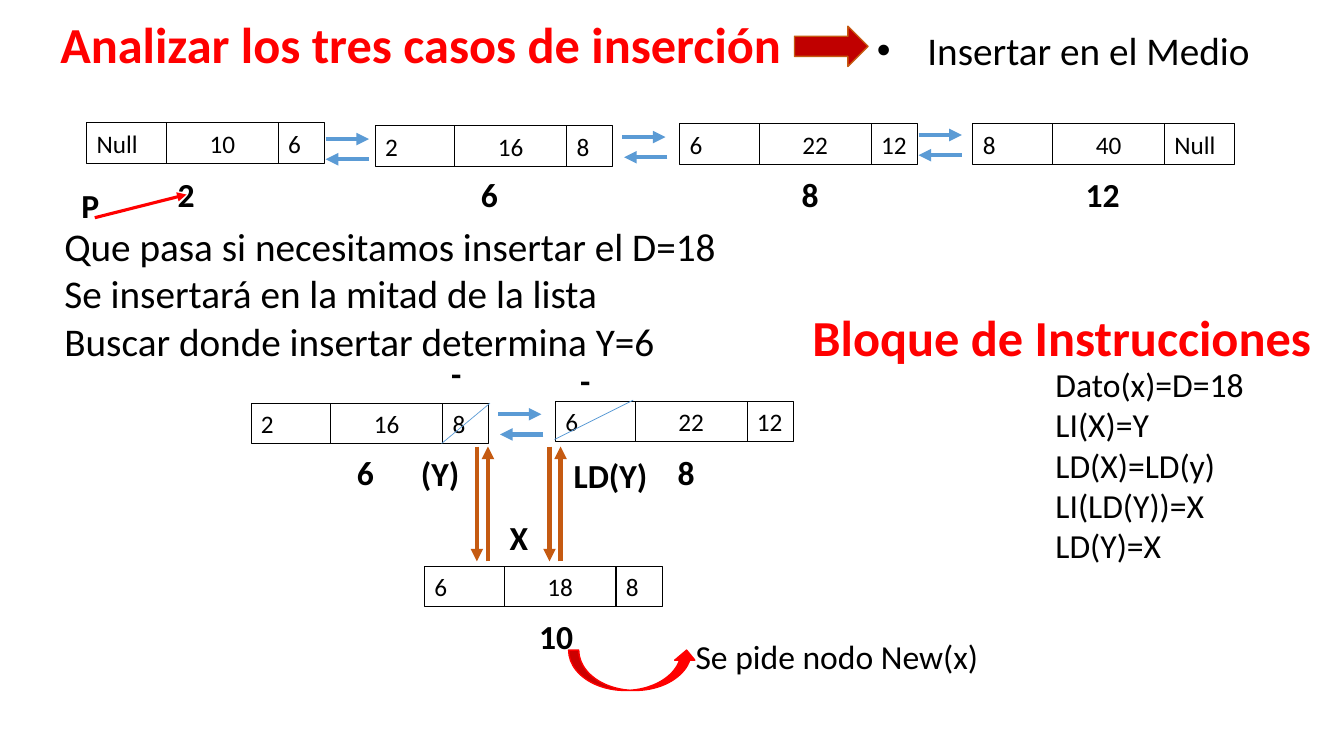
import dataclasses

import lxml.etree
import pptx
import pptx.dml.color
import pptx.enum.shapes
import pptx.enum.text
import pptx.oxml.ns
import pptx.util

ALIGN = pptx.enum.text.PP_ALIGN
SHAPE = pptx.enum.shapes.MSO_SHAPE


@dataclasses.dataclass(frozen=True)
class Theme:
    font: str = "Calibri"
    ink: str = "000000"
    red: str = "FF0000"
    dark_red: str = "C00000"
    blue: str = "5B9BD5"
    orange: str = "C55A11"
    title: int = 36
    body: int = 28
    label: int = 24
    cell: int = 18


def rgb(value):
    return pptx.dml.color.RGBColor.from_string(value)


def add_element(parent, tag, **attributes):
    return lxml.etree.SubElement(parent, pptx.oxml.ns.qn(tag), attributes)


class ListSlide:
    """Draws on a grid whose columns and rows are a tenth of an inch."""

    cell_widths = (7.9, 11.1, 4.6)
    cell_height = 4
    link_length = 4.3
    link_gap = 2
    label_size = (7.1, 5)

    def __init__(self, presentation, theme):
        self.theme = theme
        self.slide = presentation.slides.add_slide(presentation.slide_layouts[6])

    def grid(self, *cells):
        return [pptx.util.Inches(cell / 10) for cell in cells]

    def fill_text(self, shape, lines, size, color=None, bold=False, align=ALIGN.LEFT, bullet=False):
        frame = shape.text_frame
        frame_format = {
            "word_wrap": True,
            "auto_size": pptx.enum.text.MSO_AUTO_SIZE.SHAPE_TO_FIT_TEXT,
            "vertical_anchor": pptx.enum.text.MSO_ANCHOR.TOP,
        }
        font_format = {"name": self.theme.font, "size": pptx.util.Pt(size), "bold": bold}
        for name, value in frame_format.items():
            setattr(frame, name, value)
        for index, line in enumerate(lines):
            paragraph = frame.paragraphs[0] if index == 0 else frame.add_paragraph()
            paragraph.alignment = align
            if bullet:
                properties = paragraph._p.get_or_add_pPr()
                properties.set("marL", str(pptx.util.Inches(0.5)))
                properties.set("indent", str(-pptx.util.Inches(0.5)))
                add_element(properties, "a:buFont", typeface="Arial")
                add_element(properties, "a:buChar", char="•")
            run = paragraph.add_run()
            run.text = line
            for name, value in font_format.items():
                setattr(run.font, name, value)
            run.font.color.rgb = rgb(color or self.theme.ink)

    def text(self, box, lines, size, **style):
        self.fill_text(self.slide.shapes.add_textbox(*self.grid(*box)), lines, size, **style)

    def label(self, left, top, word, width=None):
        box = (left, top, width or self.label_size[0], self.label_size[1])
        self.text(box, [word], self.theme.label, bold=True, align=ALIGN.CENTER)

    def shape(self, kind, box, line, fill=None, weight=1):
        shape = self.slide.shapes.add_shape(kind, *self.grid(*box))
        shape.shadow.inherit = False
        if fill:
            shape.fill.solid()
            shape.fill.fore_color.rgb = rgb(fill)
        else:
            shape.fill.background()
        shape.line.color.rgb = rgb(line)
        shape.line.width = pptx.util.Pt(weight)
        return shape

    def node(self, left, top, values, last_width=None):
        """One list node: left link, datum and right link."""
        widths = (*self.cell_widths[:2], last_width or self.cell_widths[2])
        for value, width, align in zip(values, widths, (ALIGN.LEFT, ALIGN.CENTER, ALIGN.LEFT)):
            box = (left, top, width, self.cell_height)
            cell = self.shape(SHAPE.RECTANGLE, box, self.theme.ink, weight=0.75)
            self.fill_text(cell, [value], self.theme.cell, align=align)
            left += width

    def line(self, start, end, color, weight=3, arrow=True):
        connector = self.slide.shapes.add_connector(
            pptx.enum.shapes.MSO_CONNECTOR.STRAIGHT, *self.grid(*start, *end))
        connector.line.color.rgb = rgb(color)
        connector.line.width = pptx.util.Pt(weight)
        if arrow:
            add_element(connector.line._get_or_add_ln(), "a:tailEnd", type="triangle")
        add_element(connector._element.spPr, "a:effectLst")

    def double_link(self, left, top, shift=0):
        """A forward arrow with a backward one below it, moved right by shift."""
        right, below = left + self.link_length, top + self.link_gap
        self.line((left, top), (right, top), self.theme.blue)
        self.line((right + shift, below), (left + shift, below), self.theme.blue)


def draw_headings(page):
    theme = page.theme
    for box, heading in (
        ((5, 0.8, 74.6, 7.1), "Analizar los tres casos de inserción"),
        ((79.6, 29.9, 53.2, 7.1), "Bloque de Instrucciones"),
    ):
        page.text(box, [heading], theme.title, color=theme.red, bold=True)
    page.text((86, 2.1, 44, 5.7), ["Insertar en el Medio"], theme.body, bullet=True)
    page.shape(SHAPE.RIGHT_ARROW, (78.8, 2.6, 7.3, 4), theme.orange, theme.dark_red)


def draw_full_list(page):
    theme = page.theme
    for left, top, values, last_width in (
        (8.6, 12.2, ("Null", "10", "6"), None),
        (37.2, 12.5, ("2", "16", "8"), None),
        (67.4, 12.3, ("6", "22", "12"), None),
        (96.5, 12.3, ("8", "40", "Null"), 6.9),
    ):
        page.node(left, top, values, last_width)
    for index, shift in enumerate((0, 0.2, 0)):
        page.double_link(32.3 + 29.4 * index, 13.8 - 0.2 * index, shift)
    for left, address in ((14.9, "2"), (45, "6"), (76.8, "8"), (105.8, "12")):
        page.label(left, 16.8, address)
    page.label(5.4, 17.9, "P")
    page.line((9.4, 21.6), (18.5, 19.3), theme.red, weight=2.25)


def draw_explanations(page):
    theme = page.theme
    page.text((5.4, 21.6, 122.4, 15.1), [
        "Que pasa si necesitamos insertar el D=18",
        "Se insertará en la mitad de la lista",
        "Buscar donde insertar determina Y=6",
    ], theme.body)
    page.text((103.7, 35.6, 21, 21.2), [
        "Dato(x)=D=18", "LI(X)=Y", "LD(X)=LD(y)", "LI(LD(Y))=X", "LD(Y)=X",
    ], theme.label)
    page.text((68, 62.6, 36.8, 5), ["Se pide nodo New(x)"], theme.label)


def draw_insertion(page):
    theme = page.theme
    page.node(24.9, 40, ("2", "16", "8"))
    page.node(55.1, 39.8, ("6", "22", "12"))
    page.node(42.1, 56.2, ("6", "18", "8"))
    page.double_link(49.4, 41.1, 0.2)
    for left, top, word in (
        (32.7, 44.3, "6"), (64.5, 44.3, "8"), (51.6, 60.6, "10"),
        (40.1, 44.4, "(Y)"), (47.9, 50.8, "X"),
        (54.5, 35.2, "-"), (41.7, 34.5, "-"),
    ):
        page.label(left, top, word)
    page.label(55.6, 44.6, "LD(Y)", width=9.9)
    for down, up in ((47.3, 48.4), (54.5, 55.6)):
        page.line((down, 44.3), (down, 55.7), theme.orange)
        page.line((up, 55.7), (up, 44.3), theme.orange)
    for start, end in (((48.6, 40), (43.8, 44)), ((62.8, 39.7), (55, 43.6))):
        page.line(start, end, theme.blue, weight=0.5, arrow=False)
    page.shape(SHAPE.CURVED_UP_ARROW, (56.4, 64.5, 12.7, 4), theme.red, theme.red)


def main():
    presentation = pptx.Presentation()
    presentation.slide_width = pptx.util.Inches(13.33)
    presentation.slide_height = pptx.util.Inches(7.5)
    page = ListSlide(presentation, Theme())
    for draw in (draw_explanations, draw_full_list, draw_insertion, draw_headings):
        draw(page)
    presentation.save("out.pptx")


if __name__ == "__main__":
    main()
